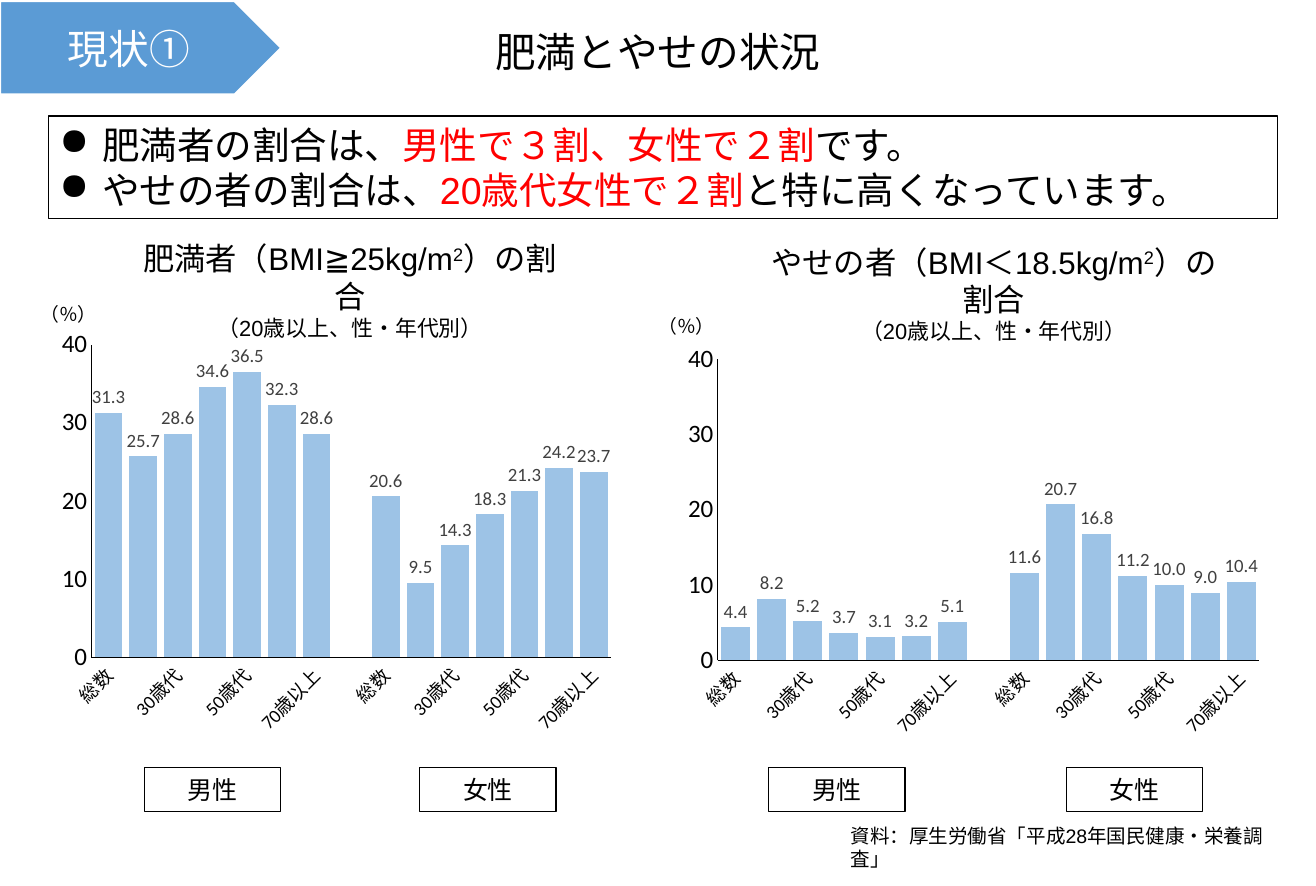
from lxml.etree import SubElement
from pptx import Presentation
from pptx.chart.data import CategoryChartData
from pptx.dml.color import RGBColor
from pptx.enum.chart import XL_CHART_TYPE, XL_LABEL_POSITION, XL_TICK_MARK
from pptx.enum.shapes import MSO_SHAPE
from pptx.enum.text import MSO_ANCHOR, PP_ALIGN
from pptx.oxml import parse_xml
from pptx.oxml.ns import nsdecls, qn
from pptx.util import Pt

# Content: boxes are (left, top, width, height) in px; runs are (text, style)
SLIDE_SIZE = (1169, 787)
AGES = ["総数", "20歳代", "30歳代", "40歳代", "50歳代", "60歳代", "70歳以上"]
CATEGORIES = AGES + [""] + AGES
SUBTITLE = "（20歳以上、性・年代別）"
BADGE = "現状①"
TITLE = "肥満とやせの状況"
SOURCE = "資料：厚生労働省「平成28年国民健康・栄養調査」"
FINDINGS = [
    [("肥満者の割合は、", "finding"), ("男性で３割、女性で２割", "emphasis"),
     ("です。", "finding")],
    [("やせの者の割合は、", "finding"), ("20歳代女性で２割", "emphasis"),
     ("と特に高くなっています。", "finding")],
]
PANELS = [
    {
        "chart_box": (562, 269, 580, 454),
        "plot": (0.13, 0.11, 0.83, 0.59),
        "heading": ("やせの者（BMI＜18.5kg/m", "2", "）の割合"),
        "heading_box": (665, 211, 436, 67),
        "unit_box": (575, 275, 74, 31),
        "men": [4.4, 8.2, 5.2, 3.7, 3.1, 3.2, 5.1],
        "women": [11.6, 20.7, 16.8, 11.2, 10.0, 9.0, 10.4],
        "groups": [("男性", 683), ("女性", 947)],
    },
    {
        "chart_box": (22, 285, 537, 421),
        "plot": (0.11, 0.05, 0.86, 0.66),
        "heading": ("肥満者（BMI≧25kg/m", "2", "）の割合"),
        "heading_box": (117, 208, 388, 67),
        "unit_box": (26, 264, 74, 31),
        "men": [31.3, 25.7, 28.6, 34.6, 36.5, 32.3, 28.6],
        "women": [20.6, 9.5, 14.3, 18.3, 21.3, 24.2, 23.7],
        "groups": [("男性", 128), ("女性", 373)],
    },
]
GROUP_TOP, GROUP_WIDTH, GROUP_HEIGHT = 682, 121, 39

# Theme: (font, size in points, colour)
BLACK, WHITE = RGBColor(0, 0, 0), RGBColor(255, 255, 255)
THEME = {
    "badge_fill": RGBColor(0x5B, 0x9B, 0xD5),
    "bar": RGBColor(0x9D, 0xC3, 0xE6),
    "badge": ("Calibri", 26, WHITE),
    "title": ("Calibri", 26, BLACK),
    "finding": ("Arial", 24, BLACK),
    "emphasis": ("Arial", 24, RGBColor(255, 0, 0)),
    "heading": ("Arial", 20, BLACK),
    "superscript": ("Arial", 20, BLACK),
    "subtitle": ("Arial", 14, BLACK),
    "unit": ("Calibri", 12, BLACK),
    "group": ("Calibri", 16, BLACK),
    "source": ("Arial", 12.5, BLACK),
    "category": ("Calibri", 12, BLACK),
    "value": ("Calibri", 16, BLACK),
    "label": ("Calibri", 12, RGBColor(0x40, 0x40, 0x40)),
}
EMU_PER_PX = 9144


def px(*lengths):
    return [length * EMU_PER_PX for length in lengths]


def set_values(target, values):
    for name, value in values.items():
        setattr(target, name, value)


def style_font(font, style):
    name, size, color = THEME[style]
    set_values(font, {"name": name, "size": Pt(size)})
    font.color.rgb = color


def write(shape, paragraphs, align=PP_ALIGN.LEFT, anchor=MSO_ANCHOR.TOP):
    frame = shape.text_frame
    set_values(frame, {"word_wrap": True, "vertical_anchor": anchor})
    for index, runs in enumerate(paragraphs):
        paragraph = frame.add_paragraph() if index else frame.paragraphs[0]
        paragraph.alignment = align
        for text, style in runs:
            run = paragraph.add_run()
            run.text = text
            style_font(run.font, style)
            if style == "superscript":
                run._r.get_or_add_rPr().set("baseline", "30000")


def add_text(slide, box, paragraphs, align=PP_ALIGN.LEFT):
    write(slide.shapes.add_textbox(*px(*box)), paragraphs, align)


def add_box(slide, box, paragraphs, kind=MSO_SHAPE.RECTANGLE, fill=None,
            line=(BLACK, 0.75), **text_format):
    shape = slide.shapes.add_shape(kind, *px(*box))
    shape.shadow.inherit = False
    if fill is None:
        shape.fill.background()
    else:
        shape.fill.solid()
        shape.fill.fore_color.rgb = fill
    shape.line.color.rgb, shape.line.width = line[0], Pt(line[1])
    write(shape, paragraphs, **text_format)
    return shape


def add_bullets(shape):
    for paragraph in shape.text_frame.paragraphs:
        properties = paragraph._p.get_or_add_pPr()
        indent, = px(38)
        properties.set("marL", str(indent))
        properties.set("indent", str(-indent))
        SubElement(properties, qn("a:buChar")).set("char", "●")


def place_plot(chart, plot):
    plot_area = chart._chartSpace.chart.plotArea
    for layout in plot_area.findall(qn("c:layout")):
        plot_area.remove(layout)
    modes = '<c:layoutTarget val="inner"/><c:xMode val="edge"/><c:yMode val="edge"/>'
    sizes = "".join(f'<c:{side} val="{value}"/>' for side, value in zip("xywh", plot))
    plot_area.insert(0, parse_xml(
        f'<c:layout {nsdecls("c")}><c:manualLayout>{modes}{sizes}'
        '</c:manualLayout></c:layout>'))


def add_bar_chart(slide, panel):
    data = CategoryChartData()
    data.categories = CATEGORIES
    data.add_series("割合（％）", panel["men"] + [None] + panel["women"])
    chart = slide.shapes.add_chart(
        XL_CHART_TYPE.COLUMN_CLUSTERED, *px(*panel["chart_box"]), data).chart
    set_values(chart, {"has_legend": False, "has_title": False})
    style_font(chart.font, "category")
    place_plot(chart, panel["plot"])

    # Axes
    for axis, style in ((chart.category_axis, "category"), (chart.value_axis, "value")):
        set_values(axis, {"has_major_gridlines": False,
                          "major_tick_mark": XL_TICK_MARK.NONE,
                          "minor_tick_mark": XL_TICK_MARK.NONE})
        style_font(axis.tick_labels.font, style)
        axis.format.line.color.rgb = BLACK
        axis.format.line.width = Pt(0.75)
    set_values(chart.value_axis,
               {"minimum_scale": 0, "maximum_scale": 40, "major_unit": 10})
    set_values(chart.value_axis.tick_labels,
               {"number_format": "0", "number_format_is_linked": False})

    # Bars and their values
    bars = chart.plots[0]
    set_values(bars, {"gap_width": 25, "overlap": -50, "vary_by_categories": False,
                      "has_data_labels": True})
    set_values(bars.data_labels, {
        "show_value": True, "number_format": "0.0", "number_format_is_linked": False,
        "position": XL_LABEL_POSITION.OUTSIDE_END})
    style_font(bars.data_labels.font, "label")
    fill = bars.series[0].format.fill
    fill.solid()
    fill.fore_color.rgb = THEME["bar"]


def main():
    presentation = Presentation()
    width, height = px(*SLIDE_SIZE)
    set_values(presentation, {"slide_width": width, "slide_height": height})
    slide = presentation.slides.add_slide(presentation.slide_layouts[6])
    centred = {"align": PP_ALIGN.CENTER, "anchor": MSO_ANCHOR.MIDDLE}

    # Chart panels
    for panel in PANELS:
        add_bar_chart(slide, panel)
        heading = list(zip(panel["heading"], ("heading", "superscript", "heading")))
        add_text(slide, panel["heading_box"], [heading, [(SUBTITLE, "subtitle")]],
                 PP_ALIGN.CENTER)
        add_text(slide, panel["unit_box"], [[("（％）", "unit")]])
        for name, left in panel["groups"]:
            add_box(slide, (left, GROUP_TOP, GROUP_WIDTH, GROUP_HEIGHT),
                    [[(name, "group")]], **centred)

    # Header, findings and source
    add_box(slide, (0, 1, 250, 83), [[(BADGE, "badge")]], MSO_SHAPE.PENTAGON,
            THEME["badge_fill"], (WHITE, 1.5), **centred)
    add_text(slide, (393, 19, 383, 54), [[(TITLE, "title")]], PP_ALIGN.CENTER)
    add_bullets(add_box(slide, (43, 103, 1092, 91), FINDINGS))
    add_text(slide, (746, 727, 388, 31), [[(SOURCE, "source")]])
    presentation.save("out.pptx")


if __name__ == "__main__":
    main()
